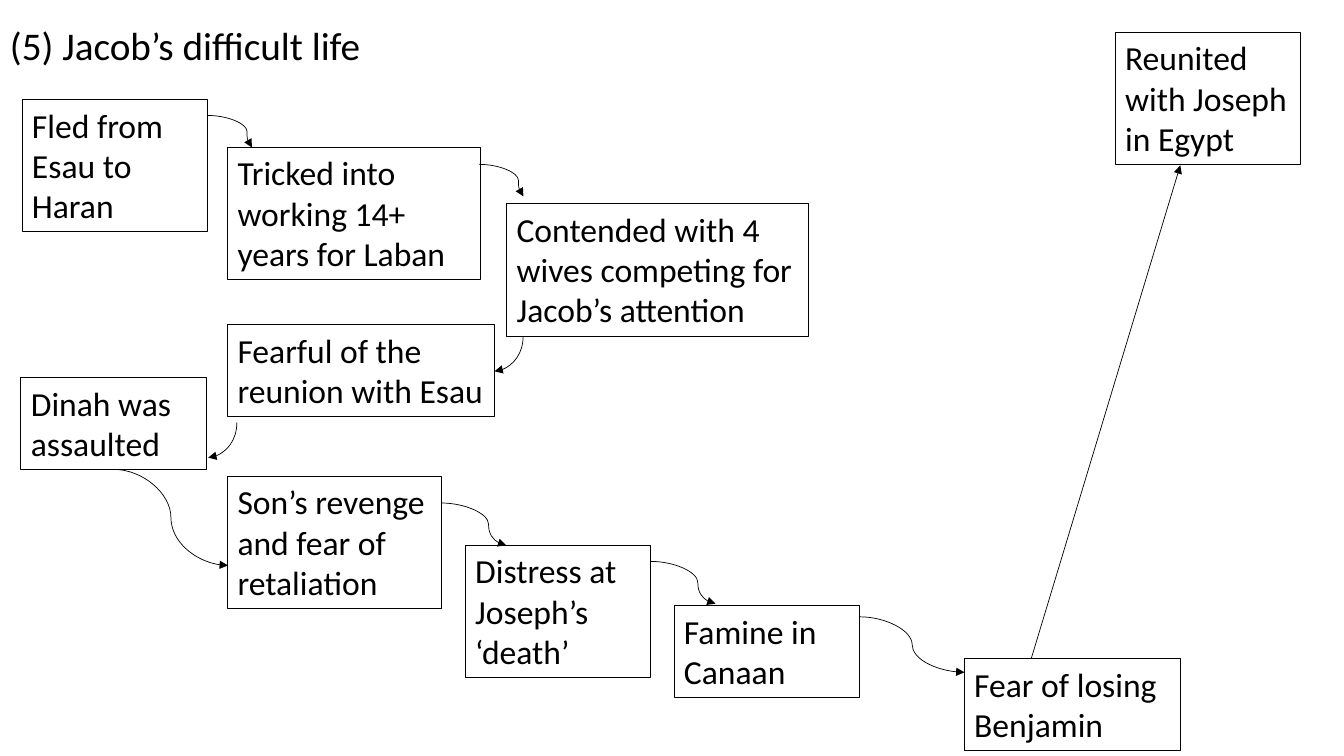
from dataclasses import dataclass

from lxml.etree import SubElement
from pptx import Presentation
from pptx.dml.color import RGBColor
from pptx.enum.shapes import MSO_CONNECTOR, MSO_SHAPE
from pptx.enum.text import MSO_ANCHOR, MSO_AUTO_SIZE, PP_ALIGN
from pptx.oxml.ns import qn
from pptx.util import Pt


@dataclass(frozen=True)
class Theme:
    font: str = "Calibri"
    ink: RGBColor = RGBColor(0, 0, 0)
    title_size: float = 28
    body_size: float = 24
    box_line: float = 0.75
    arrow_line: float = 0.5


def write(sp, text, *, font, size, color):
    tf = sp.text_frame
    tf.word_wrap = True
    tf.auto_size = MSO_AUTO_SIZE.SHAPE_TO_FIT_TEXT
    tf.vertical_anchor = MSO_ANCHOR.TOP
    p = tf.paragraphs[0]
    p.alignment = PP_ALIGN.LEFT
    r = p.add_run()
    r.text = text
    r.font.name = font
    r.font.size = Pt(size)
    r.font.color.rgb = color


class Board:
    def __init__(self, s, theme):
        self.s = s
        self.theme = theme

    def title(self, text, x, y, w, h):
        t = self.theme
        sp = self.s.shapes.add_textbox(Pt(x), Pt(y), Pt(w), Pt(h))
        write(sp, text, font=t.font, size=t.title_size, color=t.ink)

    def box(self, text, x, y, w, h):
        t = self.theme
        sp = self.s.shapes.add_shape(MSO_SHAPE.RECTANGLE, Pt(x), Pt(y), Pt(w), Pt(h))
        sp.shadow.inherit = False
        sp.fill.background()
        sp.line.color.rgb = t.ink
        sp.line.width = Pt(t.box_line)
        write(sp, text, font=t.font, size=t.body_size, color=t.ink)

    def arrow(self, x1, y1, x2, y2, kind=MSO_CONNECTOR.STRAIGHT):
        t = self.theme
        c = self.s.shapes.add_connector(kind, Pt(x1), Pt(y1), Pt(x2), Pt(y2))
        c.line.color.rgb = t.ink
        c.line.width = Pt(t.arrow_line)
        SubElement(c.line._get_or_add_ln(), qn("a:tailEnd"), type="triangle")
        SubElement(c._element.spPr, qn("a:effectLst"))
        return c

    def s_curve(self, x, y, dx, dy, bend):
        c = self.arrow(x, y, x + dx, y + dy, MSO_CONNECTOR.CURVE)
        guides = c._element.spPr.find(qn("a:prstGeom")).get_or_add_avLst()
        SubElement(guides, qn("a:gd"), name="adj1", fmla=f"val {round(bend * 100000)}")

    def down_left_curve(self, x, y, dx, dy):
        left, top = x - (dx + dy) / 2, y + (dy - dx) / 2
        c = self.arrow(left, top, left + dy, top + dx, MSO_CONNECTOR.CURVE)
        spPr = c._element.spPr
        spPr.find(qn("a:prstGeom")).set("prst", "curvedConnector2")
        spPr.find(qn("a:xfrm")).set("rot", str(90 * 60000))


TWO_LINES, THREE_LINES = 65.44, 94.52
NARROW = 132.5
INDENT = 162.6

EVENTS = [
    ("Fled from Esau to Haran", 15.8, 71.1, NARROW, THREE_LINES),
    ("Tricked into working 14+ years for Laban", INDENT, 105.3, 180.3, THREE_LINES),
    ("Contended with 4 wives competing for Jacob’s attention", 361.9, 145.6, 215.8, THREE_LINES),
    ("Fearful of the reunion with Esau", INDENT, 232, 190.4, TWO_LINES),
    ("Dinah was assaulted", 15, 269.8, NARROW, TWO_LINES),
    ("Son’s revenge and fear of retaliation", INDENT, 340.2, 152.8, THREE_LINES),
    ("Distress at Joseph’s ‘death’", 332.4, 389.5, NARROW, THREE_LINES),
    ("Fear of losing Benjamin", 688.8, 470.5, 154.4, TWO_LINES),
    ("Famine in Canaan", 481.5, 432.8, NARROW, TWO_LINES),
    ("Reunited with Joseph in Egypt", 796.6, 23, NARROW, THREE_LINES),
]

SHORT_HOP = (31.7, 22.9, 0.889)
LONG_HOP = (46.4, 30.2, 0.727)
HOPS_OUT = [(148.3, 82.5, *SHORT_HOP), (342.2, 117.4, *SHORT_HOP)]
HOPS_BACK = [(373.7, 240), (169.2, 301.7)]
HOPS_ON = [
    (81.4, 335.3, 81.4, 68.6, 0.5),
    (315.2, 359.3, *LONG_HOP),
    (464.7, 401, *LONG_HOP),
    (614.2, 440.6, 74.7, 39.6, 0.5),
]


def main():
    prs = Presentation()
    prs.slide_width, prs.slide_height = Pt(960), Pt(540)
    s = prs.slides.add_slide(prs.slide_layouts[6])
    board = Board(s, Theme())
    board.title("(5) Jacob’s difficult life", 0, 11.5, 281.5, 41.2)
    for event in EVENTS:
        board.box(*event)
    for hop in HOPS_OUT:
        board.s_curve(*hop)
    for x, y in HOPS_BACK:
        board.down_left_curve(x, y, 20.5, 25.2)
    for hop in HOPS_ON:
        board.s_curve(*hop)
    board.arrow(736.6, 470.5, 843.1, 118.1)
    prs.save("out.pptx")


if __name__ == "__main__":
    main()
